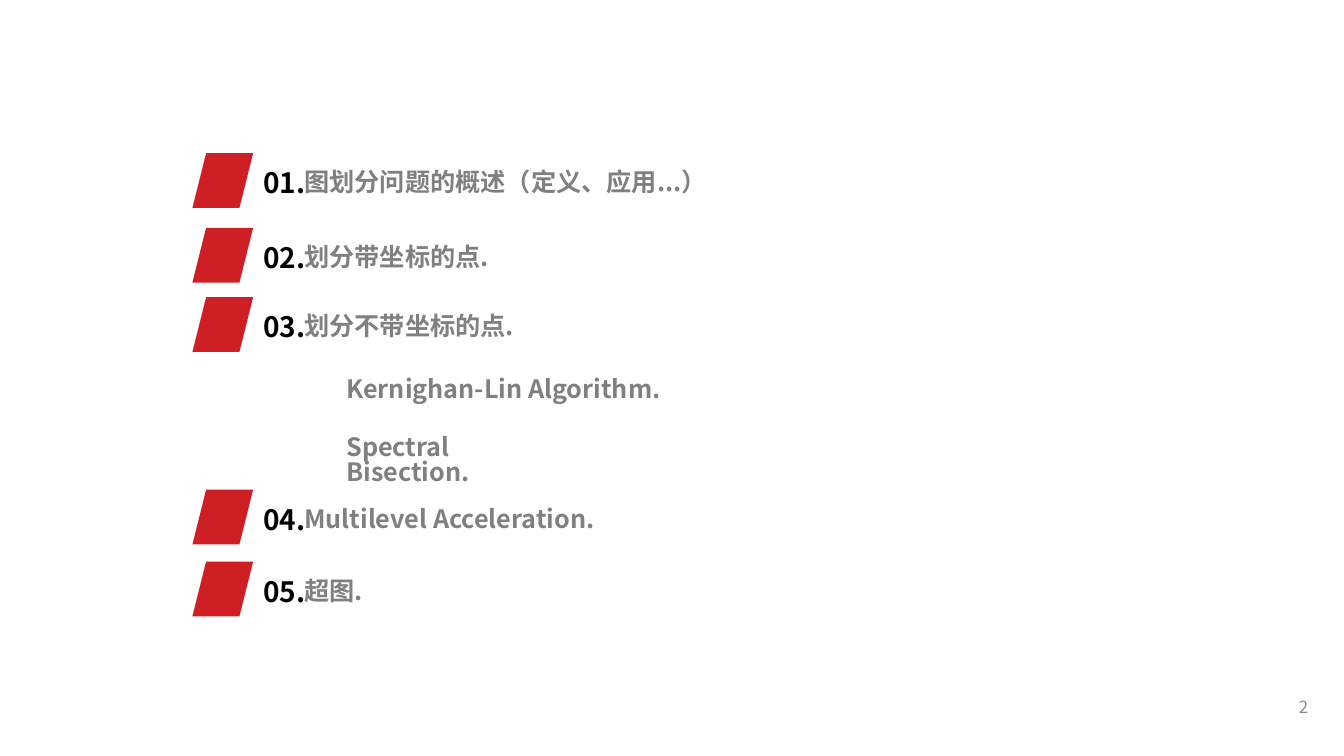
"""Build the agenda slide on graph partitioning."""
from dataclasses import dataclass

from lxml import etree
from pptx import Presentation
from pptx.dml.color import RGBColor
from pptx.enum import shapes, text
from pptx.oxml import ns
from pptx.util import Cm, Pt


@dataclass(frozen=True)
class Theme:
    """Colours, type sizes and font of the slide."""
    face: str = "Noto Sans CJK SC"
    red: RGBColor = RGBColor(0xCD, 0x1F, 0x24)
    black: RGBColor = RGBColor(0, 0, 0)
    grey: RGBColor = RGBColor(0x80, 0x80, 0x80)
    pale: RGBColor = RGBColor(0x8C, 0x8C, 0x8C)
    digit: int = 20
    label: int = 18
    page: int = 12
    lead: float = 0.83


THEME = Theme()
ROWS = [
    (3.86, "图划分问题的概述（定义、应用...）", 12.57),
    (5.74, "划分带坐标的点.", 6.22),
    (7.49, "划分不带坐标的点.", 6.22),
    (12.34, "Multilevel Acceleration.", 8.36),
    (14.15, "超图.", 6.22),
]
SUBS = [
    (9.4, "Kernighan-Lin Algorithm.", 13),
    (10.87, "Spectral Bisection.", 6.22),
]


def add_text(slide, words, left, top, width, height, size, color, bold=True):
    """Add a one-paragraph text box and return it."""
    box = slide.shapes.add_textbox(Cm(left), Cm(top), Cm(width), Cm(height))
    frame = box.text_frame
    frame.word_wrap = True
    par = frame.paragraphs[0]
    par.text = words
    par.line_spacing = THEME.lead
    font = par.font
    font.name, font.size, font.bold = THEME.face, Pt(size), bold
    font.color.rgb = color
    props = par._p.pPr.find(ns.qn("a:defRPr"))
    etree.SubElement(props, ns.qn("a:ea"), typeface=THEME.face)
    return box


def add_label(slide, words, left, top, width):
    """Add a grey topic label."""
    add_text(slide, words, left, top, width, 0.64, THEME.label, THEME.grey)


def add_mark(slide, top):
    """Add a red slanted marker."""
    mark = slide.shapes.add_shape(shapes.MSO_SHAPE.PARALLELOGRAM,
                                  Cm(4.85), Cm(top), Cm(1.53), Cm(1.38))
    mark.shadow.inherit = False
    mark.fill.solid()
    mark.fill.fore_color.rgb = THEME.red
    mark.line.fill.background()


def add_row(slide, num, top, words, width):
    """Add a marker with its number and topic."""
    add_mark(slide, top)
    add_text(slide, f"{num:02}.", 6.38, top + 0.34, 2.24, 1.22,
             THEME.digit, THEME.black)
    add_label(slide, words, 7.42, top + 0.34, width)


def add_page(slide, num):
    """Add the page number at the lower right."""
    box = add_text(slide, str(num), 25.6, 17.3, 7.62, 1.02,
                   THEME.page, THEME.pale, False)
    box.text_frame.vertical_anchor = text.MSO_ANCHOR.MIDDLE
    par = box.text_frame.paragraphs[0]
    par.alignment = text.PP_ALIGN.RIGHT
    par.line_spacing = 1.0


def main():
    """Build and save the slide."""
    deck = Presentation()
    deck.slide_width, deck.slide_height = Cm(33.87), Cm(19.05)
    slide = deck.slides.add_slide(deck.slide_layouts[6])
    for num, row in enumerate(ROWS, 1):
        add_row(slide, num, *row)
    for top, words, width in SUBS:
        add_label(slide, words, 8.48, top, width)
    add_page(slide, 2)
    deck.save("out.pptx")


if __name__ == "__main__":
    main()
